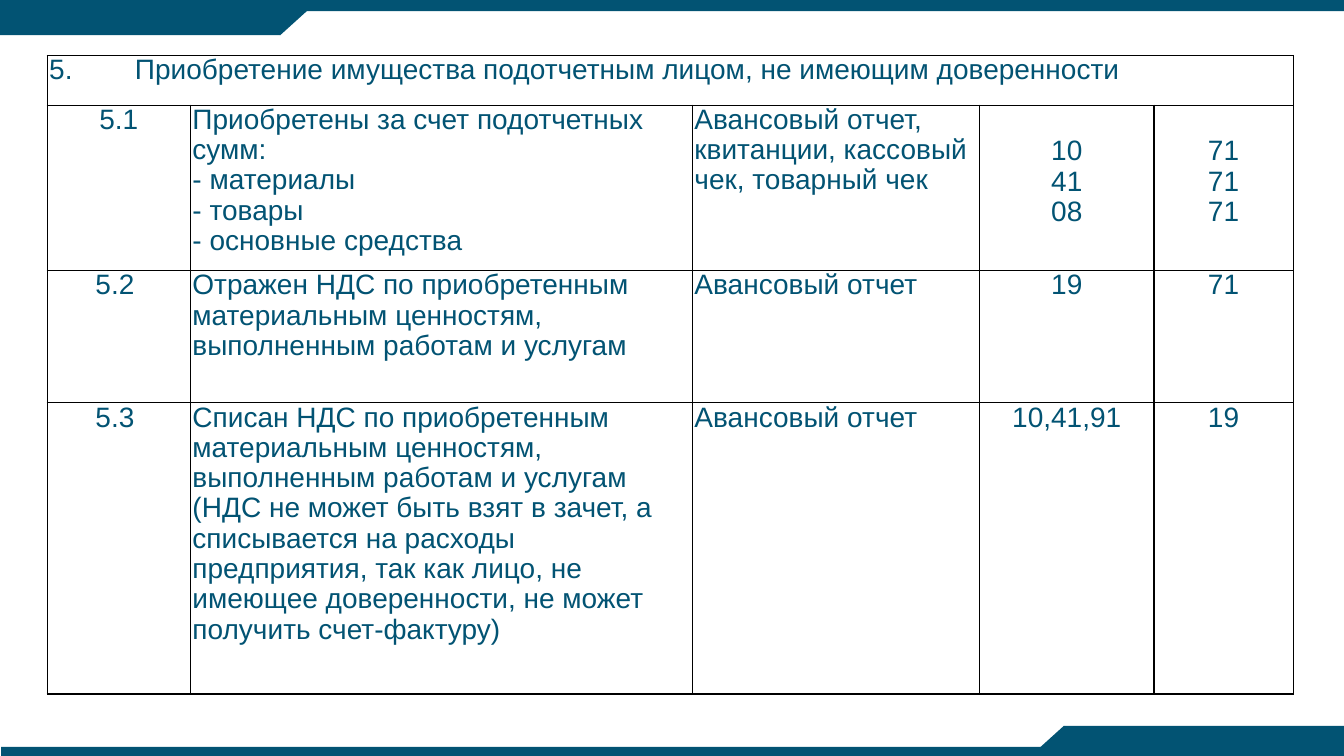
from lxml import etree
from pptx import Presentation
from pptx.dml.color import RGBColor
from pptx.enum.shapes import MSO_SHAPE
from pptx.enum.text import MSO_ANCHOR, PP_ALIGN
from pptx.oxml.ns import qn
from pptx.util import Cm, Pt

RECT = MSO_SHAPE.RECTANGLE
TRIANGLE = MSO_SHAPE.FLOWCHART_MERGE
TOP = MSO_ANCHOR.TOP
LEFT, CENTER = PP_ALIGN.LEFT, PP_ALIGN.CENTER

TEAL = RGBColor(0x02, 0x53, 0x73)
BLACK = RGBColor(0x00, 0x00, 0x00)
FONT = "Arial"
SLIDE_W, SLIDE_H = 33.87, 19.05
BAR_H, CORNER_W, CORNER_H, SLANT_W = 0.28, 7.06, 0.76, 1.68
LINE_H = 0.79

COLUMNS = [3.61, 12.65, 7.24, 4.39, 3.51]
ROWS = [1.25, 4.17, 3.33, 7.34]
HEADING = "5.\tПриобретение имущества подотчетным лицом, не имеющим доверенности"
ENTRIES = [
    (["5.1"],
     ["Приобретены за счет подотчетных сумм:", "- материалы", "- товары",
      "- основные средства"],
     ["Авансовый отчет, квитанции, кассовый чек, товарный чек"],
     ["10", "41", "08"], ["71", "71", "71"]),
    (["5.2 "],
     ["Отражен НДС по приобретенным материальным ценностям, "
      "выполненным работам и услугам"],
     ["Авансовый отчет"], ["19"], ["71"]),
    (["5.3 "],
     ["Списан НДС по приобретенным материальным ценностям, "
      "выполненным работам и услугам (НДС не может быть взят в зачет, "
      "а списывается на расходы предприятия, так как лицо, не имеющее "
      "доверенности, не может получить счет-фактуру)"],
     ["Авансовый отчет"], ["10,41,91"], ["19"]),
]
ALIGNMENTS = [CENTER, LEFT, LEFT, CENTER, CENTER]


def add_block(s, kind, left, top, width, height, rotation=0):
    sp = s.shapes.add_shape(kind, Cm(left), Cm(top), Cm(width), Cm(height))
    sp.shadow.inherit = False
    sp.fill.solid()
    sp.fill.fore_color.rgb = TEAL
    sp.line.fill.background()
    sp.rotation = rotation


def add_frame(s):
    bottom = SLIDE_H - CORNER_H
    right = SLIDE_W - CORNER_W
    add_block(s, RECT, 0, 0, SLIDE_W, BAR_H)
    add_block(s, RECT, 0.03, SLIDE_H - BAR_H + 0.05, SLIDE_W - 0.03, BAR_H - 0.05)
    add_block(s, RECT, 0, 0.13, CORNER_W, CORNER_H)
    add_block(s, TRIANGLE, CORNER_W - SLANT_W / 2, 0.13, SLANT_W, CORNER_H)
    add_block(s, RECT, right, bottom, CORNER_W, CORNER_H)
    add_block(s, TRIANGLE, right - SLANT_W / 2, bottom, SLANT_W, CORNER_H, 180)


def set_borders(cell, color=BLACK, width=Pt(1)):
    props = cell._tc.get_or_add_tcPr()
    for index, side in enumerate(("lnL", "lnR", "lnT", "lnB")):
        line = etree.Element(qn(f"a:{side}"), w=str(width))
        fill = etree.SubElement(line, qn("a:solidFill"))
        etree.SubElement(fill, qn("a:srgbClr"), val=str(color))
        props.insert(index, line)


def add_tab_stop(p, position):
    stops = etree.SubElement(p._p.get_or_add_pPr(), qn("a:tabLst"))
    etree.SubElement(stops, qn("a:tab"), pos=str(position), algn="l")


def write_text(tf, lines, align=LEFT, size=20, color=TEAL, tab=None):
    tf.word_wrap = True
    for index, line in enumerate(lines):
        p = tf.add_paragraph() if index else tf.paragraphs[0]
        p.alignment = align
        p.line_spacing = 0.97
        if tab:
            add_tab_stop(p, tab)
        r = p.add_run()
        r.text = line
        r.font.name = FONT
        r.font.size = Pt(size)
        r.font.color.rgb = color


def format_cell(cell, top=0):
    cell.margin_left = cell.margin_right = Cm(0.05)
    cell.margin_top, cell.margin_bottom = Cm(top), Cm(0)
    cell.vertical_anchor = TOP
    cell.fill.background()
    set_borders(cell)


def add_entries_table(s):
    frame = s.shapes.add_table(len(ROWS), len(COLUMNS), Cm(1.19), Cm(1.4),
                               Cm(sum(COLUMNS)), Cm(sum(ROWS)))
    table = frame.table
    table.first_row = table.horz_banding = False
    for column, width in zip(table.columns, COLUMNS):
        column.width = Cm(width)
    for row, height in zip(table.rows, ROWS):
        row.height = Cm(height)
    for cell in table.iter_cells():
        format_cell(cell)

    heading = table.cell(0, 0)
    heading.merge(table.cell(0, len(COLUMNS) - 1))
    write_text(heading.text_frame, [HEADING], tab=Cm(2.16))
    for row, entry in enumerate(ENTRIES, 1):
        for column, (lines, align) in enumerate(zip(entry, ALIGNMENTS)):
            cell = table.cell(row, column)
            write_text(cell.text_frame, lines, align=align)
            if align == CENTER and len(lines) > 1:
                cell.margin_top = Cm(LINE_H)


def main():
    prs = Presentation()
    prs.slide_width, prs.slide_height = Cm(SLIDE_W), Cm(SLIDE_H)
    s = prs.slides.add_slide(prs.slide_layouts[6])
    add_frame(s)
    add_entries_table(s)
    prs.save("out.pptx")


if __name__ == "__main__":
    main()
